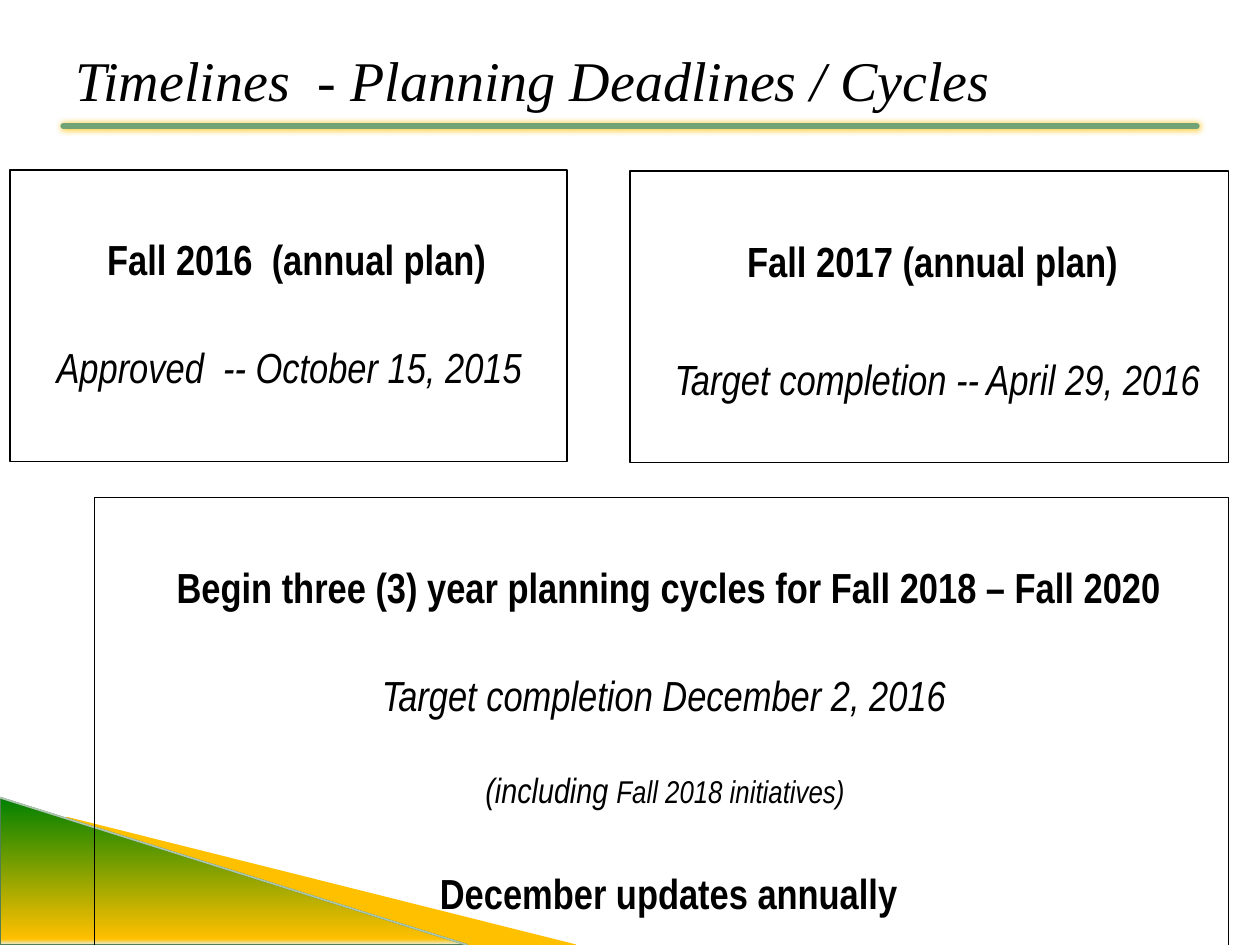
from lxml import etree
from pptx import Presentation
from pptx.dml.color import RGBColor
from pptx.enum import shapes, text
from pptx.oxml.ns import qn
from pptx.util import Cm, Pt

INK, GOLD = "000000", "FFC000"
SANS, SERIF = "Arial Narrow", "Times New Roman"
TITLE = "Timelines  - Planning Deadlines / Cycles"

# place: left, top, width, height in cm
# line: runs of (words, points), style, left margin, first indent, spacing
BOXES = [
    ((0.2, 3.43, 11.23, 5.87), [
        ([("Fall 2016  (annual plan)", 24)], "bold", 1.6, -1.27, 2),
        ([("Approved  -- October 15, 2015", 24)], "italic", 1.6, -1.57, 2),
    ]),
    ((1.9, 10.03, 22.86, 9.09), [
        ([("Begin three (3) year planning cycles for Fall 2018 – Fall 2020", 24)],
         "bold", 0.3, 0, 2),
        ([("Target completion December 2, 2016 ", 24)], "italic", 0.3, 0, 2),
        ([("(including ", 20), ("Fall 2018 initiatives) ", 18)], "italic", 0.3, 0, 2),
        ([("December updates annually", 24)], "bold", 0.3, 0, 2),
    ]),
    ((12.7, 3.45, 12.07, 5.87), [
        ([("Fall 2017 (annual plan) ", 24.1)], "bold", 1.6, -1.27, 2),
        ([("Target completion -- April 29, 2016", 24.1)], "italic", 1.6, -1.27, 2.2),
    ]),
]
WEDGE = [(1.35, 16.48), (11.6, 19.05), (9.45, 19.05), (1.37, 16.51)]
SLOPE = (0, 16.08, 9.42, 2.97)
STOPS = [(0, "008000"), (96, GOLD), (100, "E6EFE7")]


def hue(code):
    return RGBColor.from_string(code)


def node(base, tag, **attrs):
    """Append a DrawingML child with the given attributes."""
    item = etree.SubElement(base, qn("a:" + tag))
    for key, val in attrs.items():
        item.set(key, str(val))
    return item


def edge(shape, code, width):
    shape.line.color.rgb = hue(code)
    shape.line.width = Pt(width)


def rule(slide, ends, code, width, glow=None):
    """Draw a line, with an optional soft glow colour."""
    line = slide.shapes.add_connector(
        shapes.MSO_CONNECTOR.STRAIGHT, *[Cm(v) for v in ends])
    edge(line, code, width)
    fx = node(line._element.spPr, "effectLst")
    if glow:
        line.line._get_or_add_ln().set("cap", "rnd")
        shade = node(fx, "outerShdw", blurRad=Pt(4), dist=0, dir=5400000,
                     algn="ctr", rotWithShape=0)
        node(shade, "srgbClr", val=glow)


def blend(shape, stops):
    """Fill a shape from top to bottom through the colour stops."""
    shape.fill.gradient()
    grad = shape._element.spPr.find(qn("a:gradFill"))
    for item in list(grad):
        grad.remove(item)
    row = node(grad, "gsLst")
    for spot, code in stops:
        node(node(row, "gs", pos=spot * 1000), "srgbClr", val=code)
    node(grad, "lin", ang=5400000, scaled=0)


def style(run, face, size, bold, italic):
    font = run.font
    font.name, font.size, font.bold, font.italic = face, Pt(size), bold, italic
    font.color.rgb = hue(INK)


def corner(slide):
    path = [(Cm(x), Cm(y)) for x, y in WEDGE]
    pen = slide.shapes.build_freeform(*path[0])
    pen.add_line_segments(path[1:])
    wedge = pen.convert_to_shape()
    wedge.shadow.inherit = False
    wedge.fill.solid()
    wedge.fill.fore_color.rgb = hue(GOLD)
    edge(wedge, GOLD, 0.75)

    slope = slide.shapes.add_shape(
        shapes.MSO_SHAPE.RIGHT_TRIANGLE, *[Cm(v) for v in SLOPE])
    slope.shadow.inherit = False
    blend(slope, STOPS)
    edge(slope, "527E56", 1)
    x, y, w, h = SLOPE
    rule(slide, (x, y, x + w, y + h), "ACC6AE", 0.95)


def head(slide):
    box = slide.shapes.add_textbox(Cm(1.27), Cm(0.79), Cm(22.86), Cm(1.9))
    frame = box.text_frame
    frame.word_wrap = True
    frame.text = TITLE
    style(frame.paragraphs[0].runs[0], SERIF, 32, False, True)


def panel(slide, place, lines):
    box = slide.shapes.add_shape(
        shapes.MSO_SHAPE.RECTANGLE, *[Cm(v) for v in place])
    box.shadow.inherit = False
    box.fill.background()
    edge(box, INK, 0.75)
    frame = box.text_frame
    frame.word_wrap = True
    frame.vertical_anchor = text.MSO_ANCHOR.TOP
    frame.margin_top = Cm(0.27)
    for i, (runs, look, left, first, space) in enumerate(lines):
        para = frame.add_paragraph() if i else frame.paragraphs[0]
        para.alignment = text.PP_ALIGN.CENTER
        para.line_spacing = float(space)
        para.space_before = Pt(4 if i else 0)
        props = para._p.get_or_add_pPr()
        props.set("marL", str(Cm(left)))
        props.set("indent", str(Cm(first)))
        for words, size in runs:
            run = para.add_run()
            run.text = words
            style(run, SANS, size, look == "bold", look == "italic")


def main():
    deck = Presentation()
    deck.slide_width, deck.slide_height = Cm(25.4), Cm(19.05)
    slide = deck.slides.add_slide(deck.slide_layouts[6])
    corner(slide)
    rule(slide, (1.27, 2.54, 24.13, 2.54), "72A376", 3, GOLD)
    head(slide)
    for place, lines in BOXES:
        panel(slide, place, lines)
    deck.save("out.pptx")


if __name__ == "__main__":
    main()
